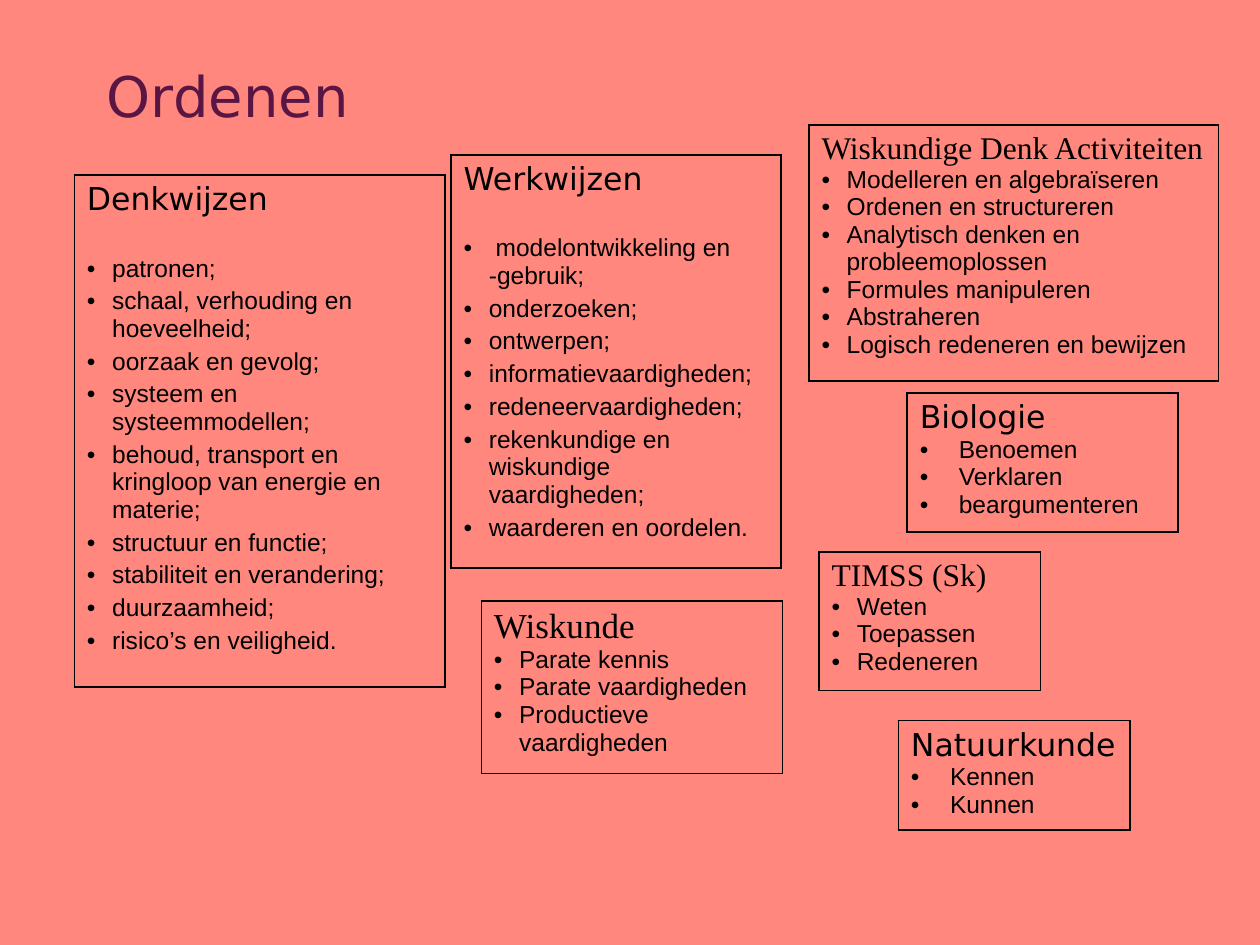
from dataclasses import dataclass

from lxml.etree import SubElement
from pptx import Presentation
from pptx.dml.color import RGBColor
from pptx.enum.text import MSO_ANCHOR
from pptx.oxml.ns import qn
from pptx.util import Inches, Pt

CORAL = RGBColor(0xFF, 0x87, 0x7E)
PLUM = RGBColor(0x59, 0x16, 0x44)
BLACK = RGBColor(0, 0, 0)
SANS, SERIF, BODY = "DejaVu Sans", "Times New Roman", "Arial"


@dataclass
class Card:
    head: str
    items: list[str]
    left: float
    top: float
    width: float
    height: float
    font: str = SANS
    size: int = 18
    indent: float = 0.2
    gap: int = 0      # points below the heading
    after: int = 0    # points below each item


CARDS = [
    Card("Denkwijzen",
         ["patronen;", "schaal, verhouding en hoeveelheid;",
          "oorzaak en gevolg;", "systeem en systeemmodellen;",
          "behoud, transport en kringloop van energie en materie;",
          "structuur en functie;", "stabiliteit en verandering;",
          "duurzaamheid;", "risico’s en veiligheid."],
         0.59, 1.39, 2.94, 4.07, gap=21, after=3),
    Card("Werkwijzen",
         [" modelontwikkeling en -gebruik;", "onderzoeken;", "ontwerpen;",
          "informatievaardigheden;", "redeneervaardigheden;",
          "rekenkundige en wiskundige vaardigheden;",
          "waarderen en oordelen."],
         3.58, 1.23, 2.62, 3.28, gap=21, after=3),
    Card("Wiskundige Denk Activiteiten",
         ["Modelleren en algebraïseren", "Ordenen en structureren",
          "Analytisch denken en probleemoplossen", "Formules manipuleren",
          "Abstraheren", "Logisch redeneren en bewijzen"],
         6.42, 0.99, 3.25, 2.03, font=SERIF),
    Card("Wiskunde",
         ["Parate kennis", "Parate vaardigheden", "Productieve vaardigheden"],
         3.82, 4.77, 2.39, 1.37, font=SERIF, size=20),
    Card("TIMSS (Sk)", ["Weten", "Toepassen", "Redeneren"],
         6.5, 4.38, 1.76, 1.1, font=SERIF),
    Card("Biologie", ["Benoemen", "Verklaren", "beargumenteren"],
         7.2, 3.12, 2.15, 1.1, indent=0.31),
    Card("Natuurkunde", ["Kennen", "Kunnen"],
         7.13, 5.72, 1.84, 0.87, indent=0.31),
]


def style(para, font: str, size: int, color: RGBColor) -> None:
    for run in para.runs:
        run.font.name = font
        run.font.size = Pt(size)
        run.font.color.rgb = color


def bullet(para, indent: float) -> None:
    props = para._p.get_or_add_pPr()
    props.set("marL", str(Inches(indent)))
    props.set("indent", str(-Inches(indent)))
    SubElement(props, qn("a:buFont"), typeface=BODY)
    SubElement(props, qn("a:buChar"), char="•")


def border(cell) -> None:
    props = cell._tc.get_or_add_tcPr()
    for side in ("lnL", "lnR", "lnT", "lnB"):
        line = SubElement(props, qn(f"a:{side}"), w=str(Pt(1)))
        fill = SubElement(line, qn("a:solidFill"))
        SubElement(fill, qn("a:srgbClr"), val=str(BLACK))


def draw_card(slide, card: Card) -> None:
    frame = slide.shapes.add_table(
        1, 1, Inches(card.left), Inches(card.top),
        Inches(card.width), Inches(card.height))
    table = frame.table
    table.first_row = table.horz_banding = False
    # The row grows with its text
    table.rows[0].height = Inches(0.41)
    frame.height = Inches(card.height)

    cell = table.cell(0, 0)
    border(cell)
    cell.fill.background()

    text = cell.text_frame
    text.text = "\n".join([card.head, *card.items])
    head, *items = text.paragraphs
    head.space_after = Pt(card.gap)
    style(head, card.font, card.size, BLACK)
    for para in items:
        para.space_after = Pt(card.after)
        bullet(para, card.indent)
        style(para, BODY, 14, BLACK)


def draw_title(slide, label: str) -> None:
    box = slide.shapes.add_textbox(
        Inches(0.75), Inches(0.25), Inches(8.75), Inches(0.82))
    text = box.text_frame
    text.word_wrap = True
    text.vertical_anchor = MSO_ANCHOR.BOTTOM
    text.text = label
    style(text.paragraphs[0], SANS, 32, PLUM)


def main() -> None:
    deck = Presentation()
    deck.slide_width, deck.slide_height = Inches(10), Inches(7.5)
    slide = deck.slides.add_slide(deck.slide_layouts[6])
    slide.background.fill.solid()
    slide.background.fill.fore_color.rgb = CORAL

    draw_title(slide, "Ordenen")
    for card in CARDS:
        draw_card(slide, card)
    deck.save("out.pptx")


if __name__ == "__main__":
    main()
